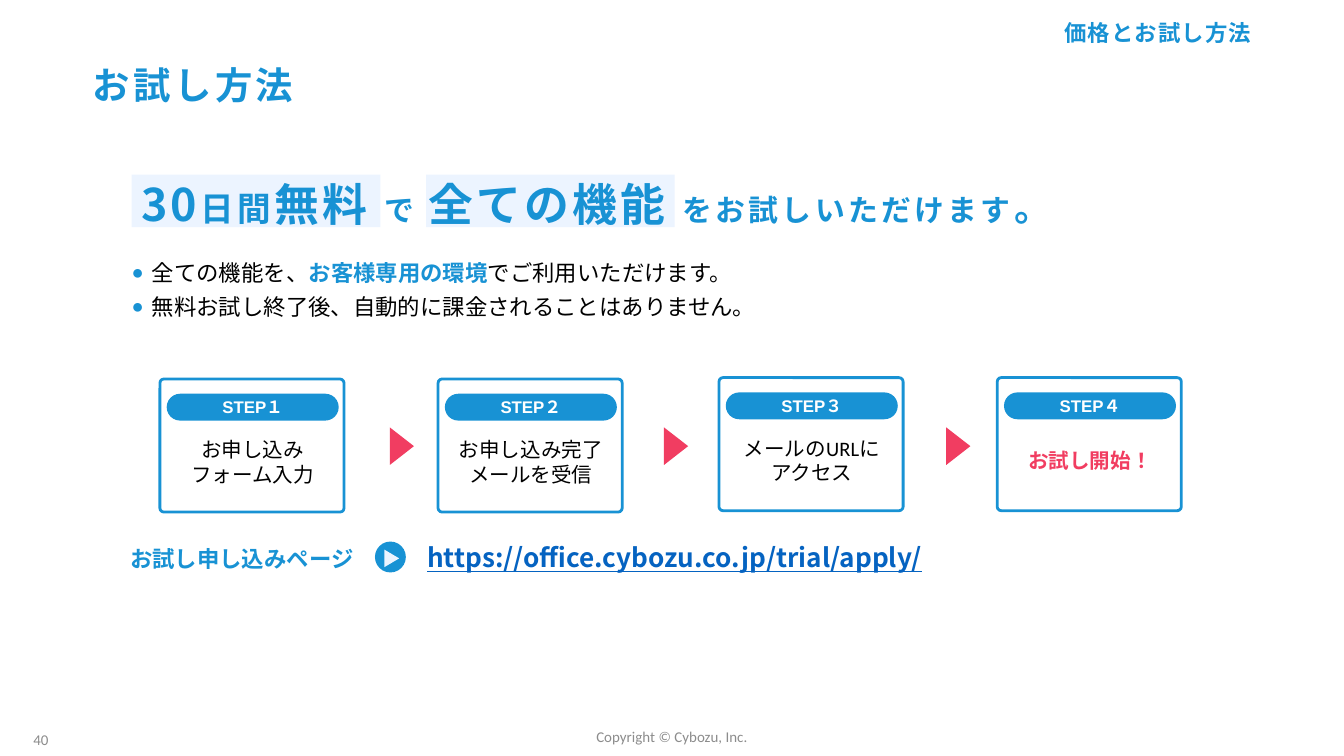
from lxml.etree import SubElement
from pptx import Presentation
from pptx.dml.color import RGBColor
from pptx.enum.lang import MSO_LANGUAGE_ID
from pptx.enum.shapes import MSO_SHAPE
from pptx.enum.text import MSO_ANCHOR, MSO_AUTO_SIZE, PP_ALIGN
from pptx.oxml.ns import qn
from pptx.util import Inches, Pt

COLORS = {
    "blue": "1892D4", "pale": "ECF4FF", "pink": "F13D61", "link": "0563C1",
    "gray": "8C8C8C", "black": "000000", "white": "FFFFFF",
}
JP = "Noto Sans CJK JP"
LATIN = "Calibri"


class SlideBuilder:
    def __init__(self, prs):
        self.slide = prs.slides.add_slide(prs.slide_layouts[1])
        self.shapes = self.slide.shapes

    def color(self, name):
        return RGBColor.from_string(COLORS[name])

    def place(self, sp, box):
        sp.left, sp.top, sp.width, sp.height = (Inches(v) for v in box)

    def frame(self, sp, anchor=MSO_ANCHOR.TOP, insets=(0.1, 0.05)):
        tf = sp.text_frame
        tf.word_wrap = True
        tf.auto_size = MSO_AUTO_SIZE.NONE
        tf.vertical_anchor = anchor
        tf.margin_left = tf.margin_right = Inches(insets[0])
        tf.margin_top = tf.margin_bottom = Inches(insets[1])
        return tf

    def run(self, p, text, size, color="blue", font=JP, bold=True, spacing=0):
        r = p.add_run()
        r.text = text
        r.font.size = Pt(size)
        r.font.bold = bold
        r.font.underline = color == "link"
        r.font.name = font
        r.font.color.rgb = self.color(color)
        r.font.language_id = MSO_LANGUAGE_ID.JAPANESE
        rPr = r.font._element
        rPr.find(qn("a:latin")).addnext(rPr.makeelement(qn("a:ea"), {"typeface": JP}))
        if spacing:
            rPr.set("spc", str(int(spacing * 100)))

    def text(self, box, lines, align=PP_ALIGN.LEFT, anchor=MSO_ANCHOR.TOP,
             insets=(0.1, 0.05), line_spacing=None, tab=None, **style):
        sp = self.shapes.add_textbox(*(Inches(v) for v in box))
        tf = self.frame(sp, anchor, insets)
        for i, line in enumerate(lines):
            p = tf.add_paragraph() if i else tf.paragraphs[0]
            if tab:
                tabs = SubElement(p._p.get_or_add_pPr(), qn("a:tabLst"))
                SubElement(tabs, qn("a:tab"), pos=str(Inches(tab)), algn="l")
            p.alignment = align
            p.line_spacing = line_spacing
            for text, size, *color in line:
                self.run(p, text, size, *color, **style)

    def title(self, box, text):
        sp = self.shapes.title
        self.place(sp, box)
        p = self.frame(sp, MSO_ANCHOR.BOTTOM, (0, 0.05)).paragraphs[0]
        p.alignment = PP_ALIGN.LEFT
        p.line_spacing = 0.9
        self.run(p, text, 20, spacing=1.8)

    def bullets(self, box, items):
        sp = self.slide.placeholders[1]
        self.place(sp, box)
        tf = self.frame(sp, insets=(0, 0))
        for i, item in enumerate(items):
            p = tf.add_paragraph() if i else tf.paragraphs[0]
            pPr = p._p.get_or_add_pPr()
            pPr.set("marL", str(Inches(0.15)))
            pPr.set("indent", str(-Inches(0.15)))
            clr = SubElement(pPr, qn("a:buClr"))
            SubElement(clr, qn("a:srgbClr"), val=COLORS["blue"])
            SubElement(pPr, qn("a:buSzPct"), val="90000")
            SubElement(pPr, qn("a:buFont"), typeface="Arial")
            SubElement(pPr, qn("a:buChar"), char="●")
            p.line_spacing = 1.2
            p.space_before = Pt(0)
            p.space_after = Pt(1)
            for text, color, bold in item:
                self.run(p, text, 12, color, bold=bold)

    def shape(self, kind, box, fill, line=None, adj=None, rotation=0, parent=None):
        shapes = parent.shapes if parent else self.shapes
        sp = shapes.add_shape(kind, *(Inches(v) for v in box))
        sp.shadow.inherit = False
        sp.rotation = rotation
        sp.fill.solid()
        sp.fill.fore_color.rgb = self.color(fill)
        if line:
            sp.line.color.rgb = self.color(line)
            sp.line.width = Pt(1.5)
        else:
            sp.line.fill.background()
        if adj is not None:
            sp.adjustments[0] = adj
        return sp

    def play_icon(self):
        group = self.shapes.add_group_shape()
        self.shape(MSO_SHAPE.OVAL, (2.79, 4.03, 0.23, 0.23), "blue", parent=group)
        self.shape(MSO_SHAPE.ISOSCELES_TRIANGLE, (2.85, 4.1, 0.13, 0.11), "pale",
                   rotation=90, parent=group)

    def step(self, x, y, label, lines, width, color="black", font=LATIN, bold=False):
        self.shape(MSO_SHAPE.ROUNDED_RECTANGLE, (x, y, 1.37, 0.99), "white",
                   line="blue", adj=0.031)
        height = 0.11 + 0.18 * len(lines)
        self.text((x + 0.69 - width / 2, y + 0.615 - height / 2, width, height),
                  [[(line, 11, color)] for line in lines], PP_ALIGN.CENTER,
                  MSO_ANCHOR.MIDDLE, font=font, bold=bold)
        pill = self.shape(MSO_SHAPE.ROUNDED_RECTANGLE, (x + 0.05, y + 0.11, 1.28, 0.2),
                          "blue", adj=0.5)
        p = self.frame(pill, MSO_ANCHOR.MIDDLE).paragraphs[0]
        p.alignment = PP_ALIGN.CENTER
        self.run(p, label, 9, "white", "Arial")


def main():
    prs = Presentation()
    prs.slide_width = Inches(10)
    prs.slide_height = prs.slide_width * 9 // 16
    s = SlideBuilder(prs)

    for x in (3.17, 0.98):
        s.shape(MSO_SHAPE.RECTANGLE, (x, 1.3, 1.85, 0.39), "pale")
    s.title((0.69, 0.46, 8.62, 0.39), "お試し方法")
    s.text((3.31, 5.3, 3.38, 0.3), [[("Copyright © Cybozu, Inc.", 8, "gray")]],
           PP_ALIGN.CENTER, MSO_ANCHOR.BOTTOM, font=LATIN, bold=False)
    s.text((0.15, 5.32, 0.54, 0.3), [[("40", 8, "gray")]],
           anchor=MSO_ANCHOR.BOTTOM, font=LATIN, bold=False)
    s.text((5.72, 0.14, 3.59, 0.2), [[("価格とお試し方法", 12)]],
           PP_ALIGN.RIGHT, insets=(0, 0), spacing=0.6)
    s.text((1.05, 1.38, 8.62, 0.39),
           [[("30", 24), ("日間", 18), ("無料 ", 24), ("で ", 16),
             ("全ての機能 ", 24), ("をお試しいただけます", 16), ("。", 20)]],
           anchor=MSO_ANCHOR.BOTTOM, insets=(0, 0.05), line_spacing=0.9, spacing=1.8)
    s.text((0.87, 3.98, 7.44, 0.34),
           [[("お試し申し込みページ\t", 12),
             ("https://office.cybozu.co.jp/trial/apply/", 14, "link")]],
           PP_ALIGN.JUSTIFY, tab=2.21)
    s.play_icon()

    s.step(1.19, 2.82, "STEP１", ["お申し込み", "フォーム入力"], 1.22)
    s.step(3.26, 2.82, "STEP２", ["お申し込み完了", "メールを受信"], 1.32)
    s.step(5.35, 2.81, "STEP３", ["メールのURLに", "アクセス"], 1.22)
    s.step(7.42, 2.81, "STEP４", ["お試し開始！"], 1.41, "pink", JP, True)
    for x in (2.85, 4.89, 6.99):
        s.shape(MSO_SHAPE.ISOSCELES_TRIANGLE, (x, 3.23, 0.28, 0.18), "pink", rotation=90)

    s.bullets((0.98, 1.89, 8.53, 0.49), [
        [("全ての機能を、", "black", False), ("お客様専用の環境", "blue", True),
         ("でご利用いただけます。", "black", False)],
        [("無料お試し終了後、自動的に課金されることはありません。", "black", False)],
    ])
    prs.save("out.pptx")


if __name__ == "__main__":
    main()
